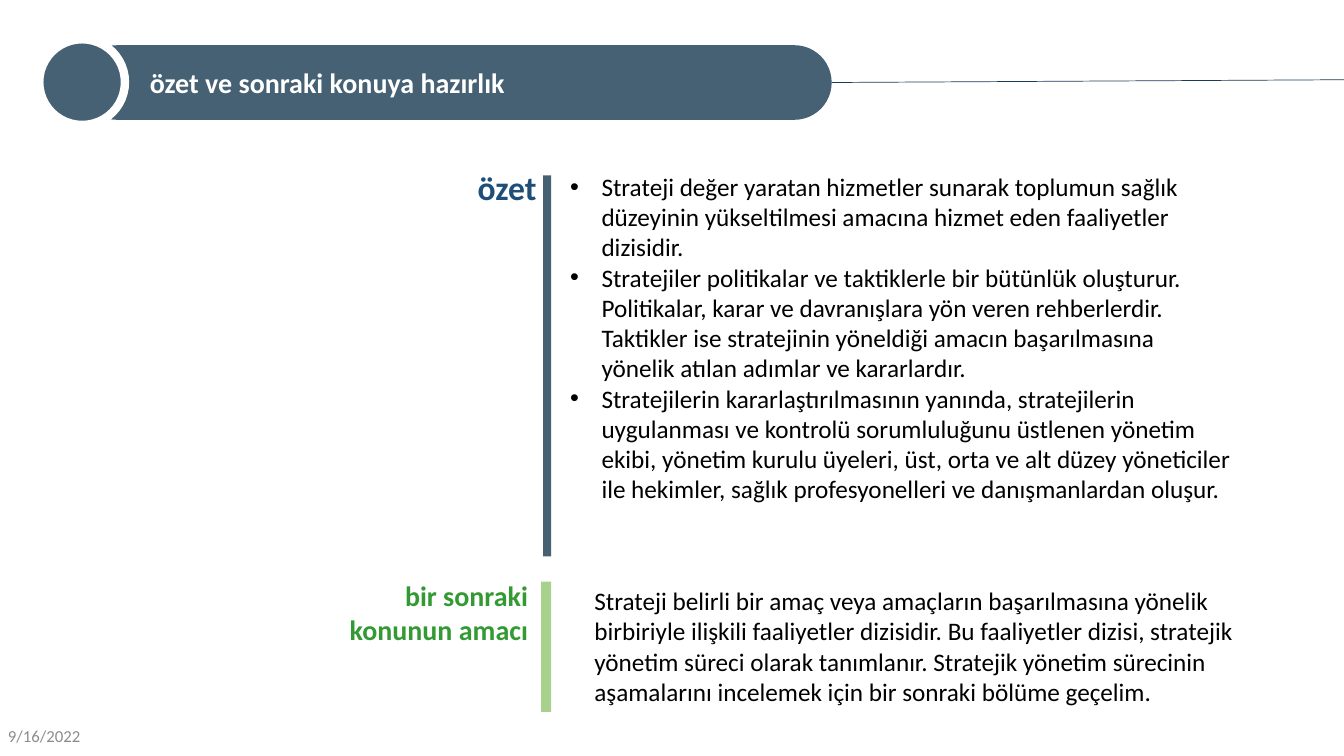
from lxml import etree
from pptx import Presentation
from pptx.dml.color import RGBColor
from pptx.enum.shapes import MSO_CONNECTOR, MSO_SHAPE
from pptx.enum.text import MSO_ANCHOR, PP_ALIGN
from pptx.oxml.ns import qn
from pptx.util import Cm, Pt

RECTANGLE = MSO_SHAPE.RECTANGLE
ROUNDED = MSO_SHAPE.ROUNDED_RECTANGLE
OVAL = MSO_SHAPE.OVAL
STRAIGHT = MSO_CONNECTOR.STRAIGHT
LEFT, RIGHT = PP_ALIGN.LEFT, PP_ALIGN.RIGHT
TOP, MIDDLE = MSO_ANCHOR.TOP, MSO_ANCHOR.MIDDLE

COLORS = {
    "slate": "456173",
    "navy": "1B3C59",
    "blue": "1F4E79",
    "green": "339933",
    "light_green": "A9D18E",
    "gray": "8C8C8C",
    "black": "000000",
    "white": "FFFFFF",
}

SUMMARY = [
    "Strateji değer yaratan hizmetler sunarak toplumun sağlık düzeyinin "
    "yükseltilmesi amacına hizmet eden faaliyetler dizisidir.",
    "Stratejiler politikalar ve taktiklerle bir bütünlük oluşturur. "
    "Politikalar, karar ve davranışlara yön veren rehberlerdir. Taktikler ise "
    "stratejinin yöneldiği amacın başarılmasına yönelik atılan adımlar ve kararlardır.",
    "Stratejilerin kararlaştırılmasının yanında, stratejilerin uygulanması ve "
    "kontrolü sorumluluğunu üstlenen yönetim ekibi, yönetim kurulu üyeleri, üst, "
    "orta ve alt düzey yöneticiler ile hekimler, sağlık profesyonelleri ve "
    "danışmanlardan oluşur.",
]
NEXT_TOPIC = (
    "Strateji belirli bir amaç veya amaçların başarılmasına yönelik birbiriyle "
    "ilişkili faaliyetler dizisidir. Bu faaliyetler dizisi, stratejik yönetim "
    "süreci olarak tanımlanır. Stratejik yönetim sürecinin aşamalarını incelemek "
    "için bir sonraki bölüme geçelim."
)


class SlideBuilder:
    font = "Calibri"

    def __init__(self, slide):
        self.slide = slide

    def color(self, name):
        return RGBColor.from_string(COLORS[name])

    def shape(self, kind, box, fill, outline=None, width=0):
        shape = self.slide.shapes.add_shape(kind, *map(Cm, box))
        shape.shadow.inherit = False
        shape.fill.solid()
        shape.fill.fore_color.rgb = self.color(fill)
        if outline:
            shape.line.color.rgb = self.color(outline)
            shape.line.width = Pt(width)
        else:
            shape.line.fill.background()
        return shape

    def set_text(self, shape, texts, size, color, bold=False, align=LEFT,
                 anchor=TOP, margin=0, bullet=False):
        frame = shape.text_frame
        frame.word_wrap = True
        frame.vertical_anchor = anchor
        frame.text = "\n".join(texts)
        for paragraph in frame.paragraphs:
            paragraph.alignment = align
            properties = paragraph._p.get_or_add_pPr()
            properties.set("marL", str(Cm(margin)))
            if bullet:
                properties.set("indent", str(-Cm(margin)))
                etree.SubElement(properties, qn("a:buFont"), typeface="Arial")
                etree.SubElement(properties, qn("a:buChar"), char="•")
            for run in paragraph.runs:
                run.font.name = self.font
                run.font.size = Pt(size)
                run.font.bold = bold
                run.font.color.rgb = self.color(color)

    def text(self, box, texts, size, color, **style):
        shape = self.slide.shapes.add_textbox(*map(Cm, box))
        self.set_text(shape, texts, size, color, **style)

    def line_from(self, shape, end, color, width):
        """Draw a line from the right side of a shape to an end point."""
        x, y = map(Cm, end)
        line = self.slide.shapes.add_connector(STRAIGHT, x, y, x, y)
        line.begin_connect(shape, 3)
        line.line.color.rgb = self.color(color)
        line.line.width = Pt(width)
        etree.SubElement(line._element.spPr, qn("a:effectLst"))


def main():
    presentation = Presentation()
    presentation.slide_width = Cm(33.87)
    presentation.slide_height = Cm(19.05)
    builder = SlideBuilder(
        presentation.slides.add_slide(presentation.slide_layouts[6]))

    # Title banner
    banner = builder.shape(ROUNDED, (2.01, 1.14, 18.95, 1.88), "slate")
    banner.adjustments[0] = 0.5
    builder.set_text(banner, ["özet ve sonraki konuya hazırlık"], 20, "white",
                     bold=True, anchor=MIDDLE, margin=1.24)
    builder.shape(OVAL, (0.99, 0.99, 2.16, 2.16), "slate", "white", 6)
    builder.line_from(banner, (33.87, 2.01), "navy", 0.5)

    # Summary
    builder.text((11.1, 4.09, 2.67, 1.27), ["özet"], 24, "blue",
                 bold=True, align=RIGHT)
    builder.shape(RECTANGLE, (13.69, 4.42, 0.2, 9.6), "slate")
    builder.text((14.12, 4.19, 17.17, 9.5), SUMMARY, 18, "black",
                 margin=0.79, bullet=True)

    # Next topic
    builder.text((8.48, 14.45, 5.08, 1.96), ["bir sonraki konunun amacı"], 20,
                 "green", bold=True, align=RIGHT)
    builder.shape(RECTANGLE, (13.64, 14.66, 0.25, 3.28), "light_green")
    builder.text((14.73, 14.63, 17.73, 3.33), [NEXT_TOPIC], 18, "black")

    # Date
    builder.text((-0.05, 18.03, 7.62, 1.02), ["9/16/2022"], 12, "gray",
                 anchor=MIDDLE)

    presentation.save("out.pptx")


if __name__ == "__main__":
    main()
